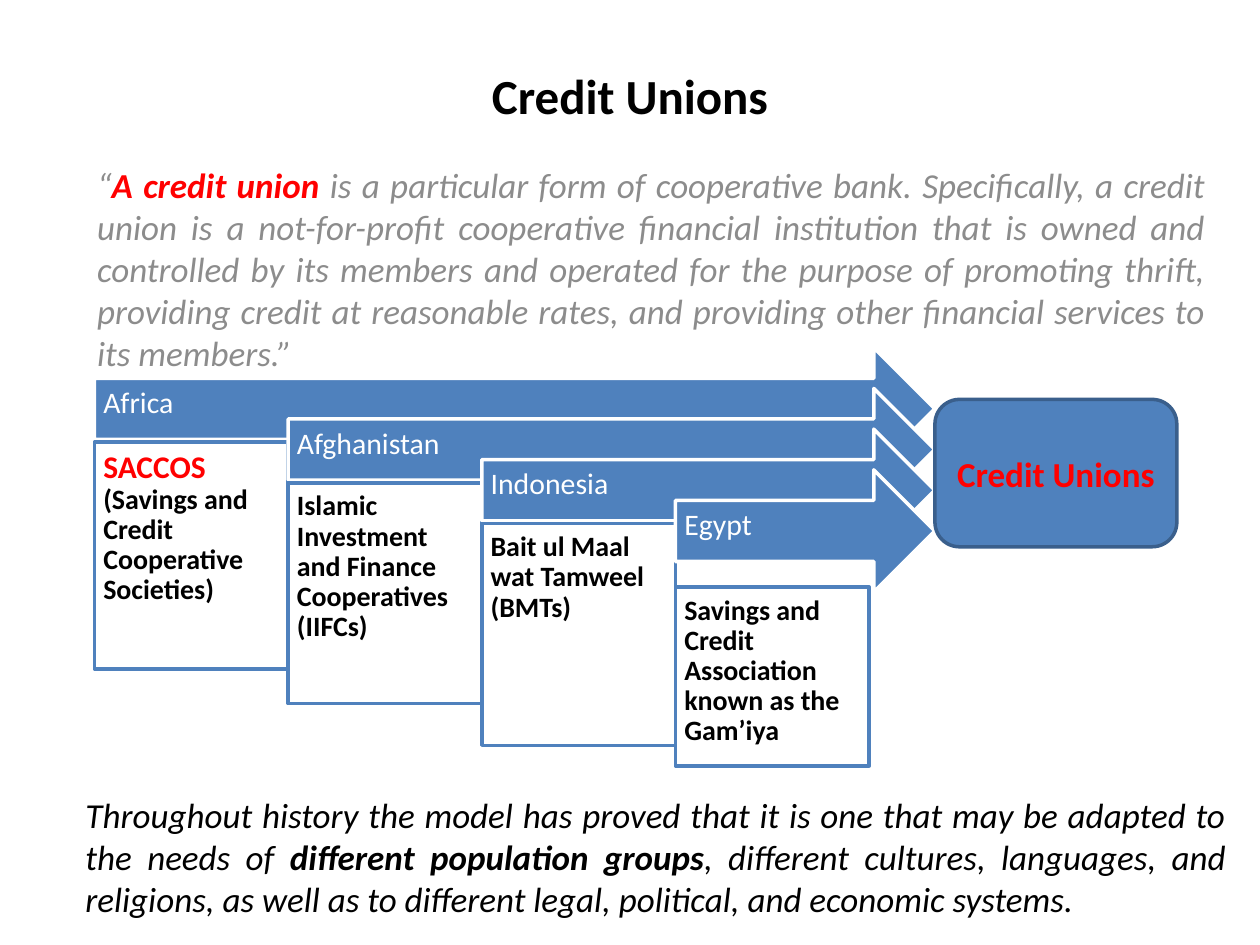
import pptx
import pptx.dml.color
import pptx.enum.shapes
import pptx.enum.text
import pptx.util

Align = pptx.enum.text.PP_ALIGN
Anchor = pptx.enum.text.MSO_ANCHOR
Shape = pptx.enum.shapes.MSO_SHAPE

COLUMNS, ROWS = 100, 75
WIDTH, HEIGHT = pptx.util.Inches(10), pptx.util.Inches(7.5)
BLUE, EDGE, RED, GRAY = "4F81BD", "3A5F8C", "FF0000", "8C8C8C"
BLACK, WHITE = "000000", "FFFFFF"

REGIONS = [
    ("Africa", [("SACCOS", {"size": 18, "color": RED}), (" ", {}),
                ("(Savings and Credit Cooperative Societies)", {})], 7.5, 18),
    ("Afghanistan", [("Islamic Investment and Finance Cooperatives (IIFCs)", {})], 7.5, 17.5),
    ("Indonesia", [("Bait ul Maal wat Tamweel (BMTs)", {})], 7.5, 17.6),
    ("Egypt", [("Savings and Credit Association known as the Gam’iya", {})], 9.3, 14.2),
]


def rgb(value):
    return pptx.dml.color.RGBColor.from_string(value)


def grid(box):
    left, top, width, height = box
    return (int(WIDTH * left / COLUMNS), int(HEIGHT * top / ROWS),
            int(WIDTH * width / COLUMNS), int(HEIGHT * height / ROWS))


def write(holder, runs, align=Align.LEFT, anchor=Anchor.TOP, insets=None,
          spacing=1.0, before=0, **base):
    frame = holder.text_frame
    frame.word_wrap = True
    frame.auto_size = pptx.enum.text.MSO_AUTO_SIZE.NONE
    frame.vertical_anchor = anchor
    if insets:
        (frame.margin_left, frame.margin_top,
         frame.margin_right, frame.margin_bottom) = map(pptx.util.Inches, insets)
    paragraph = frame.paragraphs[0]
    paragraph.alignment = align
    paragraph.line_spacing = spacing
    paragraph.space_before = pptx.util.Pt(before)
    for words, changes in runs:
        style = {"size": 20, "color": BLACK, "bold": False, "italic": False, **base, **changes}
        run = paragraph.add_run()
        run.text = words
        run.font.name = "Calibri"
        run.font.size = pptx.util.Pt(style["size"])
        run.font.bold = style["bold"]
        run.font.italic = style["italic"]
        run.font.color.rgb = rgb(style["color"])


def place(holder, box):
    holder.left, holder.top, holder.width, holder.height = grid(box)
    return holder


def draw(slide, kind, box, fill, line):
    shape = slide.shapes.add_shape(kind, *grid(box))
    shape.shadow.inherit = False
    shape.fill.solid()
    shape.fill.fore_color.rgb = rgb(fill)
    shape.line.color.rgb = rgb(line)
    shape.line.width = pptx.util.Pt(2)
    return shape


def add_heading(slide, box):
    write(place(slide.shapes.title, box), [("Credit Unions", {})], align=Align.CENTER,
          anchor=Anchor.MIDDLE, size=28, bold=True)


def add_definition(slide, box):
    write(place(slide.placeholders[1], box), [
        ("“", {}),
        ("A credit union ", {"color": RED, "bold": True}),
        ("is a particular form of cooperative bank. Specifically, a credit union is a "
         "not-for-profit cooperative financial institution that is owned and controlled by its "
         "members and operated for the purpose of promoting thrift, providing credit at "
         "reasonable rates, and providing other financial services to its members.”", {}),
    ], align=Align.JUSTIFY, before=4, color=GRAY, italic=True)


def add_regions(slide, box):
    left, top, width, height = box
    column, step, arrow_height = 15.37, 3.23, 9.7
    for index, (region, scheme, drop, depth) in enumerate(REGIONS):
        shift = index * column
        row = top + index * step
        arrow = draw(slide, Shape.RIGHT_ARROW,
                     (left + shift, row, width - shift, arrow_height), BLUE, WHITE)
        write(arrow, [(region, {})], anchor=Anchor.MIDDLE, insets=(0.07, 0.07, 0.28, 0.15),
              spacing=0.9, size=17, color=WHITE)
        card = draw(slide, Shape.RECTANGLE,
                    (left + shift, row + drop, column, depth), WHITE, BLUE)
        write(card, scheme, insets=(0.07,) * 4, spacing=0.9, size=16, bold=True)


def add_outcome(slide, box):
    write(draw(slide, Shape.ROUNDED_RECTANGLE, box, BLUE, EDGE), [("Credit Unions", {})],
          align=Align.CENTER, anchor=Anchor.MIDDLE, color=RED, bold=True)


def add_conclusion(slide, box):
    write(slide.shapes.add_textbox(*grid(box)), [
        ("Throughout history the model has proved that it is one that may be adapted to the "
         "needs of ", {}),
        ("different population groups", {"bold": True}),
        (", different cultures, languages, and religions, as well as to different legal, "
         "political, and economic systems.", {}),
    ], align=Align.JUSTIFY, italic=True)


def main():
    deck = pptx.Presentation()
    deck.slide_width, deck.slide_height = WIDTH, HEIGHT
    slide = deck.slides.add_slide(deck.slide_layouts[0])
    add_heading(slide, (5, 2.5, 90, 10))
    add_definition(slide, (6.7, 12.5, 90, 19.2))
    add_regions(slide, (7.5, 27.6, 66.7, 33.2))
    add_outcome(slide, (74.2, 31.7, 19.2, 11.7))
    add_conclusion(slide, (5.8, 62.5, 92.5, 11.1))
    deck.save("out.pptx")


if __name__ == "__main__":
    main()
